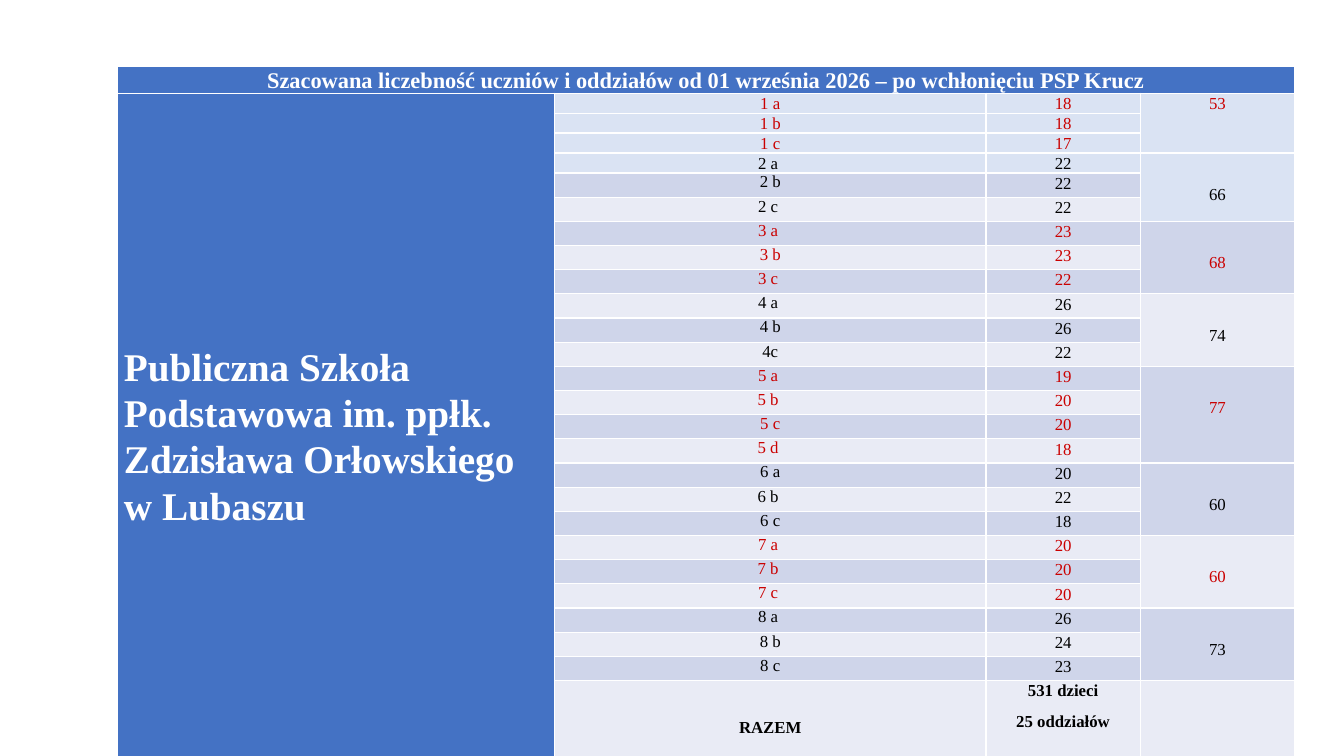
"""Build the slide with the estimated numbers of pupils and classes."""
from pptx import Presentation
from pptx.dml.color import RGBColor
from pptx.enum.text import PP_ALIGN as Align
from pptx.util import Inches, Pt

HEADING = "Szacowana liczebność uczniów i oddziałów od 01 września 2026 – po wchłonięciu PSP Krucz"
SCHOOL = "Publiczna Szkoła Podstawowa im. ppłk. Zdzisława Orłowskiego w Lubaszu"
GRADES = [
    ("53", [("1 a", "18"), ("1 b", "18"), ("1 c", "17")]),
    ("66", [("2 a ", "22"), ("2 b", "22"), ("2 c ", "22")]),
    ("68", [("3 a ", "23"), ("3 b", "23"), ("3 c ", "22")]),
    ("74", [("4 a ", "26"), ("4 b", "26"), ("4c", "22")]),
    ("77", [("5 a ", "19"), ("5 b ", "20"), ("5 c", "20"), ("5 d ", "18")]),
    ("60", [("6 a", "20"), ("6 b ", "22"), ("6 c", "18")]),
    ("60", [("7 a ", "20"), ("7 b ", "20"), ("7 c ", "20")]),
    ("73", [("8 a ", "26"), ("8 b", "24"), ("8 c", "23")]),
]
SUMMARY = ("RAZEM", "531 dzieci\n25 oddziałów")

WHITE = RGBColor(0xFF, 0xFF, 0xFF)
BLACK = RGBColor(0x00, 0x00, 0x00)
RED = RGBColor(0xCA, 0x00, 0x00)
BLUE = RGBColor(0x44, 0x72, 0xC4)
PALE_BLUE = RGBColor(0xDA, 0xE3, 0xF3)
DARK_BAND = RGBColor(0xCF, 0xD5, 0xEA)
LIGHT_BAND = RGBColor(0xE9, 0xEB, 0xF5)

FONT = "Times New Roman"
COLUMN_WIDTHS = (4.34, 4.28, 1.53, 1.53)
PALE_ROWS = 4
CLASS_COUNT = sum(len(classes) for _, classes in GRADES)
ROW_HEIGHTS = [0.25] + [0.19] * PALE_ROWS + [0.24] * (CLASS_COUNT - PALE_ROWS) + [0.81]


def row_fill(row):
    """Return the fill of a body row."""
    if row <= PALE_ROWS:
        return PALE_BLUE
    return DARK_BAND if row % 2 else LIGHT_BAND


def write(cell, text, color=BLACK, size=12, bold=False, align=Align.CENTER, top=0, spaced=True):
    """Write formatted text into a cell, starting below its top margin."""
    cell.margin_top = Inches(top)
    cell.text = text
    for paragraph in cell.text_frame.paragraphs:
        paragraph.alignment = align
        if spaced:
            paragraph.line_spacing = 1.07
            paragraph.space_after = Pt(8)
        font = paragraph.font
        font.name, font.size, font.bold = FONT, Pt(size), bold
        font.color.rgb = color


def add_table(slide):
    """Add the empty table with its sizes, margins and fills."""
    table = slide.shapes.add_table(
        len(ROW_HEIGHTS), len(COLUMN_WIDTHS), Inches(1.16), Inches(0.66),
        Inches(sum(COLUMN_WIDTHS)), Inches(sum(ROW_HEIGHTS))).table
    for column, width in zip(table.columns, COLUMN_WIDTHS):
        column.width = Inches(width)
    for row_index, height in enumerate(ROW_HEIGHTS):
        table.rows[row_index].height = Inches(height)
        for column_index in range(len(COLUMN_WIDTHS)):
            cell = table.cell(row_index, column_index)
            cell.margin_left = cell.margin_right = Inches(0.07)
            cell.margin_top = cell.margin_bottom = 0
            cell.text_frame.paragraphs[0].font.size = Pt(12)
            cell.fill.solid()
            is_blue = row_index == 0 or column_index == 0
            cell.fill.fore_color.rgb = BLUE if is_blue else row_fill(row_index)
    return table


def main():
    """Build and save the presentation."""
    presentation = Presentation()
    presentation.slide_width, presentation.slide_height = Inches(13.33), Inches(7.5)
    slide = presentation.slides.add_slide(presentation.slide_layouts[6])
    table = add_table(slide)
    last_row = len(ROW_HEIGHTS) - 1

    table.cell(0, 0).merge(table.cell(0, 3))
    write(table.cell(0, 0), HEADING, WHITE, 16, True)
    table.cell(1, 0).merge(table.cell(last_row, 0))
    write(table.cell(1, 0), SCHOOL, WHITE, 28, True, Align.LEFT, top=2.48)

    row = 1
    for grade, (total, classes) in enumerate(GRADES, start=1):
        color = RED if grade % 2 else BLACK
        table.cell(row, 3).merge(table.cell(row + len(classes) - 1, 3))
        write(table.cell(row, 3), total, color, top=0 if grade == 1 else 0.31)
        for name, pupils in classes:
            write(table.cell(row, 1), name, color, spaced=row <= PALE_ROWS)
            write(table.cell(row, 2), pupils, color)
            row += 1

    label, totals = SUMMARY
    write(table.cell(last_row, 1), label, bold=True, top=0.38, spaced=False)
    write(table.cell(last_row, 2), totals, bold=True)
    presentation.save("out.pptx")


if __name__ == "__main__":
    main()
